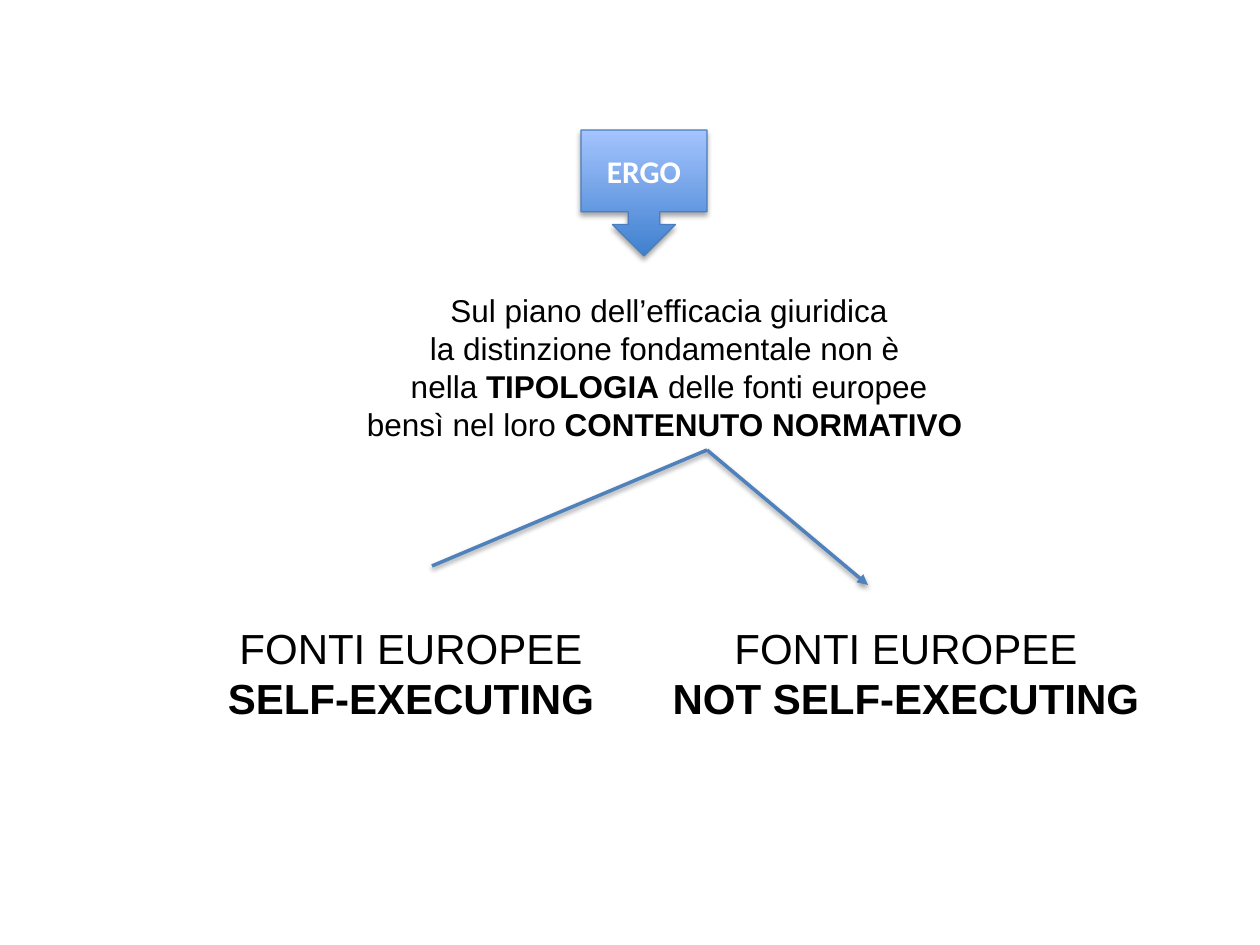
from lxml.etree import SubElement
from pptx import Presentation
from pptx.dml.color import RGBColor
from pptx.enum.shapes import MSO_CONNECTOR as CONN, MSO_SHAPE as SHAPE
from pptx.enum.text import MSO_ANCHOR as ANCHOR, MSO_AUTO_SIZE as AUTO, PP_ALIGN as ALIGN
from pptx.oxml.ns import qn
from pptx.util import Pt

PX = 914400 / 126
COLORS = {
    "text": "000000",
    "callout_text": "FFFFFF",
    "callout_dark": "3F80CE",
    "callout_light": "A4C4FF",
    "callout_line": "4B7EBC",
    "branch": "4F81BD",
    "shadow": "000000",
}


def emu(*lengths):
    """Turn px lengths into EMU."""
    return [round(n * PX) for n in lengths]


def rgb(name):
    """Return a named colour."""
    return RGBColor.from_string(COLORS[name])


def style_run(r, size, color, font="Arial", bold=False):
    """Format one run."""
    r.font.size = Pt(size)
    r.font.name = font
    r.font.bold = bold
    r.font.color.rgb = rgb(color)


def add_shadow(sp, distance, opacity):
    """Give a shape or connector a soft shadow straight below it."""
    effects = SubElement(sp._element.spPr, qn("a:effectLst"))
    outer = SubElement(effects, qn("a:outerShdw"), blurRad=str(Pt(3.1)),
                       dist=str(Pt(distance)), dir="5400000", rotWithShape="0")
    color = SubElement(outer, qn("a:srgbClr"), val=COLORS["shadow"])
    SubElement(color, qn("a:alpha"), val=str(opacity * 1000))


def add_callout(s, box, text):
    """Draw the gradient arrow callout."""
    sp = s.shapes.add_shape(SHAPE.DOWN_ARROW_CALLOUT, *emu(*box))
    sp.fill.gradient()
    sp.fill.gradient_angle = 90
    for stop, name in zip(sp.fill.gradient_stops, ("callout_dark", "callout_light")):
        stop.color.rgb = rgb(name)
    sp.line.color.rgb = rgb("callout_line")
    sp.line.width = Pt(0.75)
    add_shadow(sp, 1.8, 35)
    tf = sp.text_frame
    tf.text = text
    tf.vertical_anchor = ANCHOR.MIDDLE
    p = tf.paragraphs[0]
    p.alignment = ALIGN.CENTER
    style_run(p.runs[0], 18, "callout_text", "Calibri", True)


def add_text(s, box, size, lines):
    """Write centred lines, each a list of runs where every second one is bold."""
    tf = s.shapes.add_textbox(*emu(*box)).text_frame
    tf.word_wrap = False
    tf.auto_size = AUTO.SHAPE_TO_FIT_TEXT
    for i, line in enumerate(lines):
        p = tf.add_paragraph() if i else tf.paragraphs[0]
        p.alignment = ALIGN.CENTER
        for j, text in enumerate(line):
            if text:
                r = p.add_run()
                r.text = text
                style_run(r, size, "text", bold=j % 2 == 1)


def add_fork(s, box):
    """Draw two branches from one apex, the right one ending in an arrowhead."""
    x, y, w, h = box
    apex = (x + 275, y)
    for end, arrow in (((x, y + 116), False), ((x + w, y + h), True)):
        branch = s.shapes.add_connector(CONN.STRAIGHT, *emu(*apex, *end))
        branch.line.color.rgb = rgb("branch")
        branch.line.width = Pt(2)
        if arrow:
            SubElement(branch.line._get_or_add_ln(), qn("a:tailEnd"), type="triangle")
        add_shadow(branch, 1.6, 38)


def main():
    """Build and save the slide."""
    prs = Presentation()
    prs.slide_width, prs.slide_height = emu(1260, 945)
    s = prs.slides.add_slide(prs.slide_layouts[6])
    add_callout(s, (581, 130, 126, 126), "ERGO")
    add_text(s, (352, 285, 634, 165), 18, [
        ["Sul piano dell’efficacia giuridica"],
        ["la distinzione fondamentale non è "],
        ["nella ", "TIPOLOGIA", " delle fonti europee"],
        ["bensì nel loro ", "CONTENUTO NORMATIVO "],
    ])
    add_fork(s, (432, 450, 436, 135))
    for x, w, kind in ((213, 396, "SELF-EXECUTING"), (658, 496, "NOT SELF-EXECUTING")):
        add_text(s, (x, 616, w, 115), 24, [["FONTI EUROPEE"], ["", kind]])
    prs.save("out.pptx")


if __name__ == "__main__":
    main()
